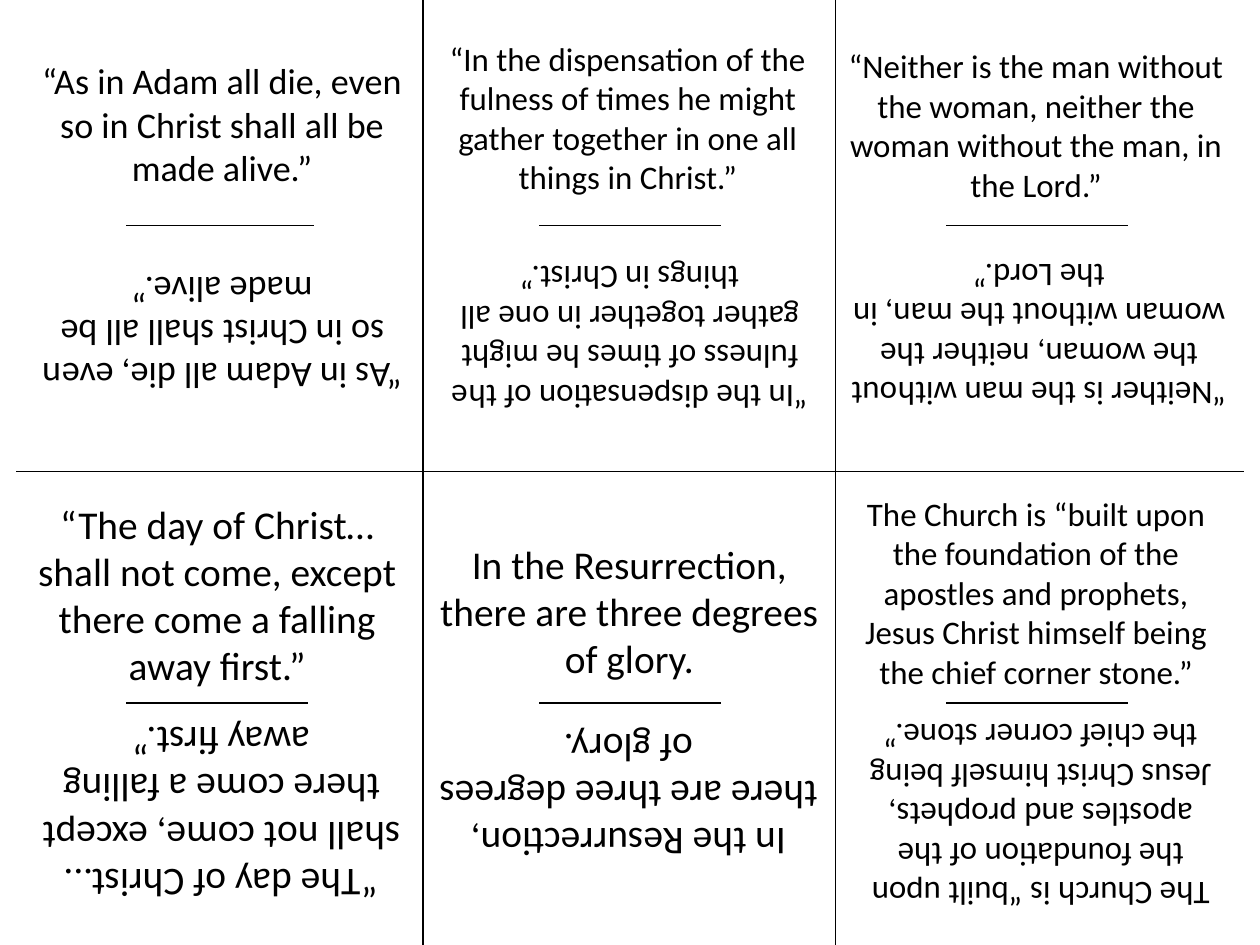
from dataclasses import dataclass

from lxml import etree
from pptx import Presentation
from pptx import util as u
from pptx.dml.color import RGBColor
from pptx.enum import shapes, text
from pptx.oxml import ns


@dataclass(frozen=True)
class Theme:
    font: str = "Calibri"
    ink: RGBColor = RGBColor(0, 0, 0)
    small: float = 18.8
    mid: float = 20.6
    large: float = 22.5
    rule: float = 0.75


theme = Theme()
WIDE, HIGH = 25.4, 19.05
BOX, PAD_X, PAD_Y, LEAD = 8.1, 0.23, 0.115, 1.22
EDGE, MID = 0.33, 9.5
COLS = (8.53, 16.84)
FOLDS = {4.55: (2.67, 2.54, 10.87, 19.08), 14.17: (2.54, 10.87, 19.08)}
FOLD = 3.66

# words, size, lines, upright corner, turned corner
CARDS = [
    ("“As in Adam all die, even so in Christ shall all be made alive.”",
     theme.mid, 3, (0.43, 1.07), (0.43, 5.28)),
    ("“In the dispensation of the fulness of times he might gather together in one all things in Christ.”",
     theme.small, 4, (8.61, 0.66), (8.64, 5.08)),
    ("“Neither is the man without the woman, neither the woman without the man, in the Lord.”",
     theme.small, 4, (16.84, 0.81), (16.89, 5.03)),
    ("“The day of Christ… shall not come, except there come a falling away first.”",
     theme.large, 4, (0.33, 9.96), (0.41, 14.33)),
    ("In the Resurrection, there are three degrees of glory.",
     theme.large, 3, (8.64, 10.77), (8.61, 14.48)),
    ("The Church is “built upon the foundation of the apostles and prophets, Jesus Christ himself being the chief corner stone.”",
     theme.small, 5, (16.84, 9.83), (16.92, 14.3)),
]


def add_line(slide, *ends):
    line = slide.shapes.add_connector(
        shapes.MSO_CONNECTOR.STRAIGHT, *(u.Cm(end) for end in ends))
    line.line.color.rgb = theme.ink
    line.line.width = u.Pt(theme.rule)
    etree.SubElement(line._element.spPr, ns.qn("a:effectLst"))


def add_verse(slide, words, size, lines, spot, turn):
    tall = lines * size * LEAD * 2.54 / 72 + 2 * PAD_Y
    box = slide.shapes.add_textbox(*(u.Cm(n) for n in (*spot, BOX, tall)))
    box.rotation = turn
    frame = box.text_frame
    frame.word_wrap = True
    frame.auto_size = text.MSO_AUTO_SIZE.SHAPE_TO_FIT_TEXT
    frame.margin_left = frame.margin_right = u.Cm(PAD_X)
    frame.margin_top = frame.margin_bottom = u.Cm(PAD_Y)
    para = frame.paragraphs[0]
    para.text = words
    para.alignment = text.PP_ALIGN.CENTER
    para.font.name = theme.font
    para.font.size = u.Pt(size)
    para.font.color.rgb = theme.ink


def main():
    """Build a sheet of six fold-over verse cards."""
    deck = Presentation()
    deck.slide_width, deck.slide_height = u.Cm(WIDE), u.Cm(HIGH)
    slide = deck.slides.add_slide(deck.slide_layouts[6])
    add_line(slide, EDGE, MID, WIDE - EDGE, MID)
    for x in COLS:
        add_line(slide, x, 0, x, HIGH)
    for y, starts in FOLDS.items():
        for x in starts:
            add_line(slide, x, y, x + FOLD, y)
    for words, size, lines, *spots in CARDS:
        for spot, turn in zip(spots, (0, 180)):
            add_verse(slide, words, size, lines, spot, turn)
    deck.save("out.pptx")


if __name__ == "__main__":
    main()
